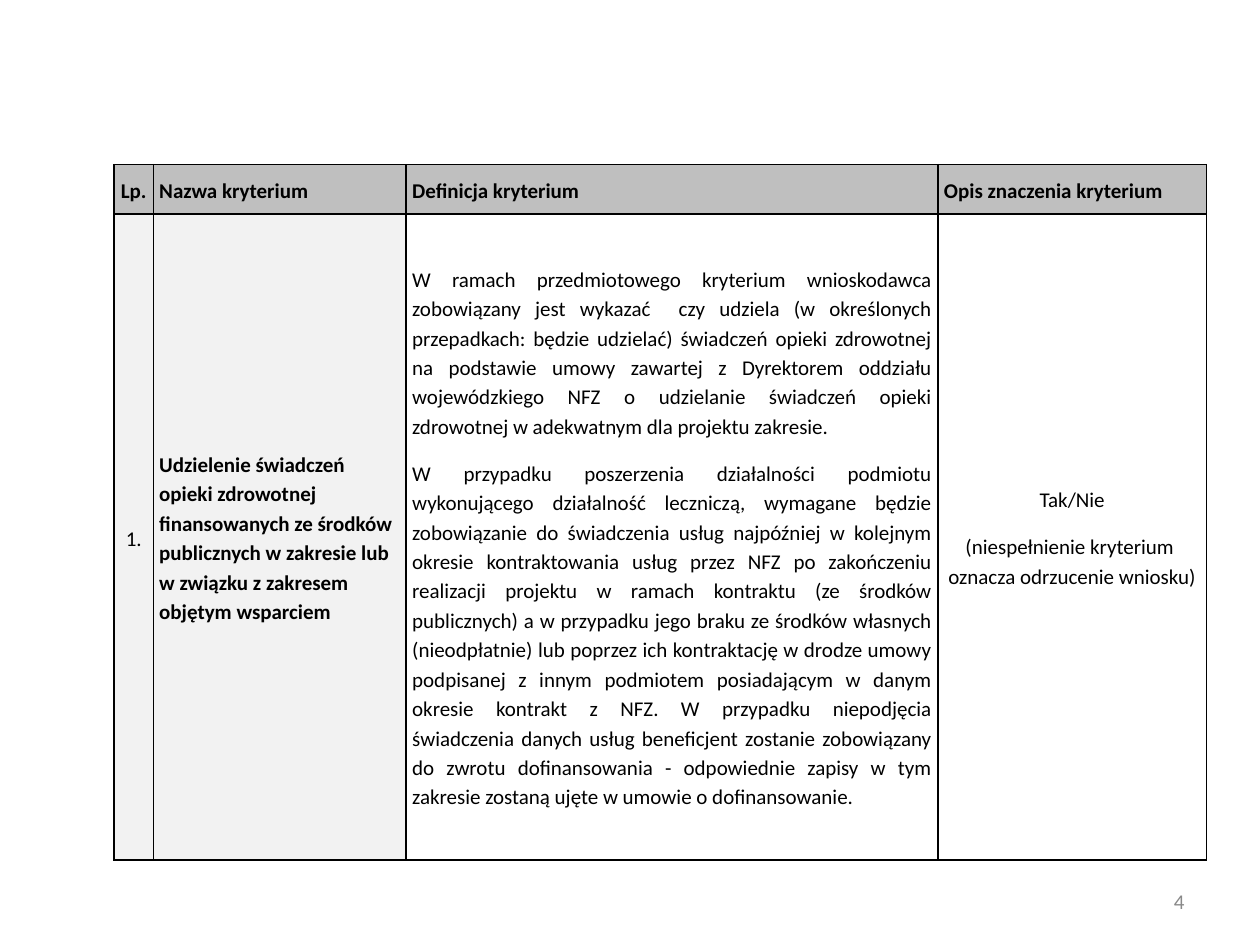
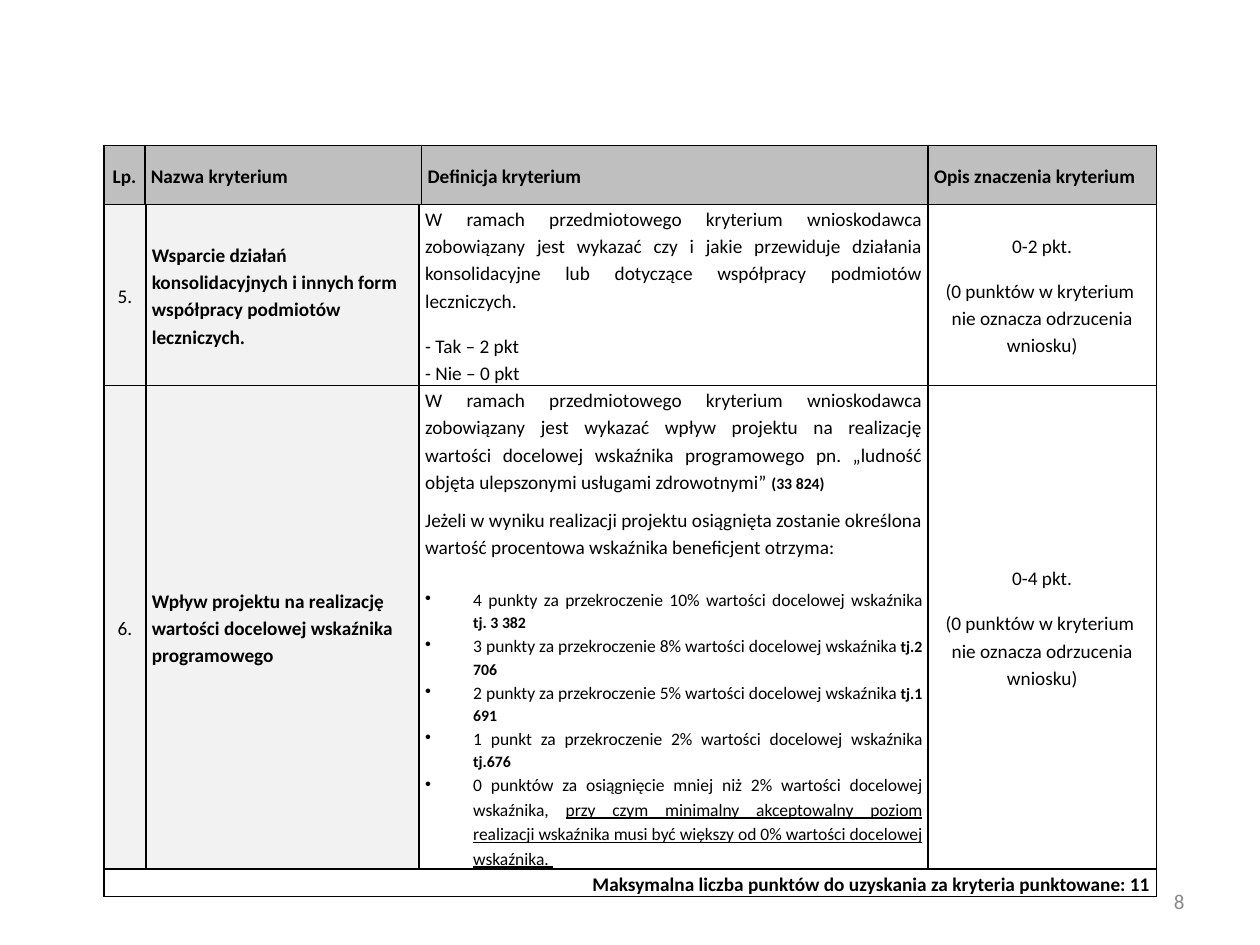
from dataclasses import dataclass

from lxml import etree
from pptx import Presentation
from pptx.dml.color import RGBColor
from pptx.enum import text as t
from pptx.oxml import ns
from pptx.util import Cm, Pt

# Shared look
FONT = "Calibri"
BLACK = RGBColor(0x00, 0x00, 0x00)
GREY = RGBColor(0x89, 0x89, 0x89)
HEAD = RGBColor(0xBF, 0xBF, 0xBF)
PALE = RGBColor(0xF2, 0xF2, 0xF2)
LEFT, MID, RIGHT, JUST = (t.PP_ALIGN.LEFT, t.PP_ALIGN.CENTER,
                          t.PP_ALIGN.RIGHT, t.PP_ALIGN.JUSTIFY)
PAD = Cm(0.12)
HANG = Cm(0.97)
TITLES = ["Lp.", "Nazwa kryterium", "Definicja kryterium",
          "Opis znaczenia kryterium"]


@dataclass
class Run:
    text: str
    size: int = 0  # 0 keeps the size of the table
    bold: bool = False
    line: bool = False


@dataclass
class Para:
    runs: list
    align: int = LEFT
    after: float = 0
    before: float = 0
    bullet: bool = False


@dataclass
class Box:
    left: float
    top: float
    width: float
    height: float

    def place(self):
        return Cm(self.left), Cm(self.top), Cm(self.width), Cm(self.height)


# Text
def add_run(para, text, size, color, bold=False, line=False):
    for i, part in enumerate(text.split("\n")):
        if i:
            para.add_line_break()
        run = para.add_run()
        run.text = part
        font = run.font
        font.name, font.size, font.bold = FONT, Pt(size), bold
        font.underline = line
        font.color.rgb = color


def add_bullet(para):
    props = para._p.get_or_add_pPr()
    props.set("marL", str(HANG))
    props.set("indent", str(-HANG))
    etree.SubElement(props, ns.qn("a:buChar")).set("char", "•")


def fill_text(frame, paras, size):
    for i, item in enumerate(paras):
        para = frame.add_paragraph() if i else frame.paragraphs[0]
        if item.bullet:
            add_bullet(para)
        para.alignment = item.align
        para.line_spacing = 1.15
        para.space_before, para.space_after = Pt(item.before), Pt(item.after)
        for run in item.runs:
            add_run(para, run.text, run.size or size, BLACK, run.bold, run.line)


# Table parts
def add_border(cell):
    props = cell._tc.get_or_add_tcPr()
    for side in ("lnL", "lnR", "lnT", "lnB"):
        edge = etree.SubElement(props, ns.qn("a:" + side), w=str(Pt(1)))
        fill = etree.SubElement(edge, ns.qn("a:solidFill"))
        etree.SubElement(fill, ns.qn("a:srgbClr"), val=str(BLACK))


def style_cell(cell, color=None):
    cell.margin_left = cell.margin_right = PAD
    cell.margin_top = cell.margin_bottom = 0
    cell.vertical_anchor = t.MSO_ANCHOR.MIDDLE
    add_border(cell)
    if color is None:
        cell.fill.background()
    else:
        cell.fill.solid()
        cell.fill.fore_color.rgb = color


def add_grid(slide, box, cols, rows, data, size):
    """Each data row is a pair: the cell fills and the cell paragraphs."""
    frame = slide.shapes.add_table(len(rows), len(cols), *box.place())
    grid = frame.table
    grid.first_row = grid.horz_banding = False
    for col, width in zip(grid.columns, cols):
        col.width = Cm(width)
    for row, height, (fills, cells) in zip(grid.rows, rows, data):
        row.height = Cm(height)
        for cell, color in zip(row.cells, fills):
            style_cell(cell, color)
        if len(cells) == 1:
            row.cells[0].merge(row.cells[len(cols) - 1])
        for cell, paras in zip(row.cells, cells):
            fill_text(cell.text_frame, paras, size)


def head_row():
    return [HEAD] * 4, [[Para([Run(title, bold=True)], LEFT if i else MID)]
                        for i, title in enumerate(TITLES)]


def rule_row(num, name, paras, score, note):
    return [PALE, PALE, None, None], [
        [Para([Run(num)], MID)],
        [Para([Run(name, bold=True)])],
        paras,
        [Para([Run(score)], MID, after=10), Para([Run(note)], MID)],
    ]


def sum_row(text):
    return [None] * 4, [[Para([Run(text, bold=True)], RIGHT)]]


def point(text, *extra):
    return Para([Run(text, 10), *extra], JUST, bullet=True)


def add_page(slide, num, box):
    frame = slide.shapes.add_textbox(*box.place()).text_frame
    frame.word_wrap = True
    frame.vertical_anchor = t.MSO_ANCHOR.MIDDLE
    para = frame.paragraphs[0]
    para.alignment = RIGHT
    add_run(para, num, 12, GREY)


def new_slide(deck, num):
    slide = deck.slides.add_slide(deck.slide_layouts[6])
    add_page(slide, num, Box(18.21, 17.65, 5.92, 1.02))
    return slide


# Slides
def access_slide(deck):
    slide = new_slide(deck, "4")
    paras = [
        Para([Run("W ramach przedmiotowego kryterium wnioskodawca zobowiązany "
                  "jest wykazać  czy udziela (w określonych przepadkach: będzie "
                  "udzielać) świadczeń opieki zdrowotnej na podstawie umowy "
                  "zawartej z Dyrektorem oddziału wojewódzkiego NFZ o udzielanie "
                  "świadczeń opieki zdrowotnej w adekwatnym dla projektu "
                  "zakresie. ")], JUST, after=10),
        Para([Run("W przypadku poszerzenia działalności podmiotu wykonującego "
                  "działalność leczniczą, wymagane będzie zobowiązanie do "
                  "świadczenia usług najpóźniej w kolejnym okresie "
                  "kontraktowania usług przez NFZ po zakończeniu realizacji "
                  "projektu w ramach kontraktu (ze środków publicznych) a w "
                  "przypadku jego braku ze środków własnych (nieodpłatnie) lub "
                  "poprzez ich kontraktację w drodze umowy podpisanej z innym "
                  "podmiotem posiadającym w danym okresie kontrakt z NFZ. W "
                  "przypadku niepodjęcia świadczenia danych usług beneficjent "
                  "zostanie zobowiązany do zwrotu dofinansowania - odpowiednie "
                  "zapisy w tym zakresie zostaną ujęte w umowie o "
                  "dofinansowanie. ")], JUST),
    ]
    rule = rule_row(
        "1.", "Udzielenie świadczeń opieki zdrowotnej finansowanych ze środków "
        "publicznych w zakresie lub w związku z zakresem objętym wsparciem",
        paras, "Tak/Nie",
        "(niespełnienie kryterium \noznacza odrzucenie wniosku)")
    add_grid(slide, Box(2.3, 3.32, 22.02, 14.02), [0.79, 5.1, 10.72, 5.41],
             [0.99, 13.03], [head_row(), rule], 12)


def score_slide(deck):
    slide = new_slide(deck, "8")
    note = "(0 punktów w kryterium \nnie oznacza odrzucenia wniosku)"
    merge = [
        Para([Run("W ramach przedmiotowego kryterium wnioskodawca zobowiązany "
                  "jest wykazać czy i jakie przewiduje działania konsolidacyjne "
                  "lub dotyczące współpracy podmiotów leczniczych.")],
             JUST, after=10),
        Para([Run("- Tak – 2 pkt")], JUST),
        Para([Run("- Nie – 0 pkt")], JUST),
    ]
    impact = [
        Para([Run("W ramach przedmiotowego kryterium wnioskodawca zobowiązany "
                  "jest wykazać wpływ projektu na realizację wartości docelowej "
                  "wskaźnika programowego pn. „ludność objęta ulepszonymi "
                  "usługami zdrowotnymi” "), Run("(33 824) ", 9, True)],
             JUST, after=6),
        Para([Run("Jeżeli w wyniku realizacji projektu osiągnięta zostanie "
                  "określona wartość procentowa wskaźnika beneficjent "
                  "otrzyma:")], JUST),
    ]
    steps = [("4 punkty", "10%", "tj. 3 382 "), ("3 punkty", "8%", "tj.2 706 "),
             ("2 punkty", "5%", "tj.1 691 "), ("1 punkt", "2%", "tj.676 ")]
    points = [point(f"{score} za przekroczenie {share} wartości docelowej "
                    "wskaźnika ", Run(count, 9, True))
              for score, share, count in steps]
    points.append(point(
        "0 punktów za osiągnięcie mniej niż 2% wartości docelowej wskaźnika, ",
        Run("przy czym minimalny akceptowalny poziom realizacji wskaźnika musi "
            "być większy od 0% wartości docelowej wskaźnika. ", 10, line=True)))
    points[0].before = 15.4
    rules = [
        rule_row("5.", "Wsparcie działań konsolidacyjnych i innych form "
                 "współpracy podmiotów leczniczych.", merge, "0-2 pkt.", note),
        rule_row("6.", "Wpływ projektu na realizację wartości docelowej "
                 "wskaźnika programowego", impact + points, "0-4 pkt.", note),
        sum_row("Maksymalna liczba punktów do uzyskania za kryteria "
                "punktowane: 11"),
    ]
    add_grid(slide, Box(2.1, 2.93, 21.21, 1.19), [0.82, 5.58, 10.21, 4.6],
             [1.19], [head_row()], 11)
    add_grid(slide, Box(2.1, 4.12, 21.21, 13.95), [0.84, 5.51, 10.26, 4.6],
             [3.65, 9.75, 0.55], rules, 11)


def main():
    deck = Presentation()
    deck.slide_width, deck.slide_height = Cm(25.4), Cm(19.05)
    access_slide(deck)
    score_slide(deck)
    deck.save("out.pptx")


if __name__ == "__main__":
    main()
